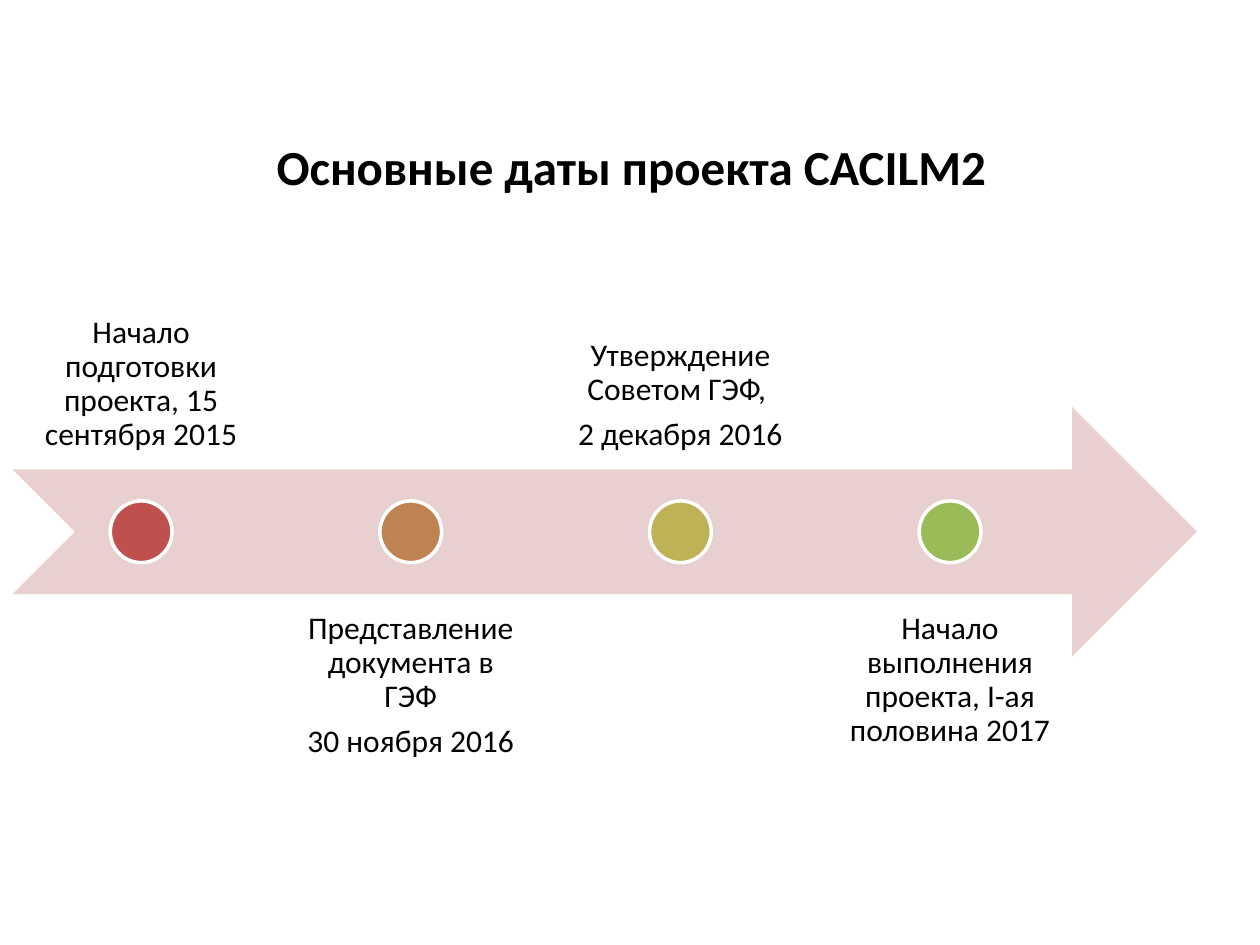
from pptx import Presentation
from pptx.dml.color import RGBColor
from pptx.enum.shapes import MSO_SHAPE
from pptx.enum.text import MSO_ANCHOR, PP_ALIGN
from pptx.util import Inches, Pt

FONT = "Calibri"
BLACK = RGBColor(0x00, 0x00, 0x00)
WHITE = RGBColor(0xFF, 0xFF, 0xFF)
ARROW_PINK = RGBColor(0xE8, 0xD0, 0xD0)
RED = RGBColor(0xC0, 0x50, 0x4D)
BROWN = RGBColor(0xBE, 0x83, 0x51)
OLIVE = RGBColor(0xBD, 0xB2, 0x55)
GREEN = RGBColor(0x9B, 0xBB, 0x59)

MILESTONES = [
    (RED, ["Начало подготовки проекта, 15 сентября 2015"]),
    (BROWN, ["Представление документа в ГЭФ", "30 ноября 2016"]),
    (OLIVE, ["Утверждение Советом ГЭФ, ", "2 декабря 2016"]),
    (GREEN, ["Начало выполнения проекта, I-ая половина 2017"]),
]

ARROW_LEFT, ARROW_TOP = 0.1, 3.23
ARROW_WIDTH, ARROW_HEIGHT = 9.4, 1.98
LABEL_WIDTH, LABEL_HEIGHT = 2.04, 1.98
MILESTONE_STEP = 2.14
UPPER_LABEL_TOP, LOWER_LABEL_TOP = 1.75, 4.72
DOT_SIZE = 0.49


def add_text(slide, left, top, width, height, lines, size, anchor,
             bold=False, inset=0.1, line_spacing=1.0):
    box = slide.shapes.add_textbox(
        Inches(left), Inches(top), Inches(width), Inches(height))
    frame = box.text_frame
    frame.word_wrap = True
    frame.vertical_anchor = anchor
    frame.margin_left = frame.margin_right = Inches(inset)
    frame.margin_top = frame.margin_bottom = Inches(inset)
    for index, line in enumerate(lines):
        paragraph = frame.add_paragraph() if index else frame.paragraphs[0]
        paragraph.alignment = PP_ALIGN.CENTER
        paragraph.line_spacing = line_spacing
        if index:
            paragraph.space_before = Pt(0.35 * size)
        run = paragraph.add_run()
        run.text = line
        run.font.name = FONT
        run.font.size = Pt(size)
        run.font.bold = bold
        run.font.color.rgb = BLACK


def add_filled(slide, preset, left, top, width, height, color):
    shape = slide.shapes.add_shape(
        preset, Inches(left), Inches(top), Inches(width), Inches(height))
    shape.shadow.inherit = False
    shape.fill.solid()
    shape.fill.fore_color.rgb = color
    shape.line.fill.background()
    return shape


def add_milestone(slide, index, color, lines):
    """Place a dot on the arrow with its label above or below in turn."""
    left = ARROW_LEFT + index * MILESTONE_STEP
    above = index % 2 == 0
    add_text(slide, left, UPPER_LABEL_TOP if above else LOWER_LABEL_TOP,
             LABEL_WIDTH, LABEL_HEIGHT, lines, 18,
             MSO_ANCHOR.BOTTOM if above else MSO_ANCHOR.TOP,
             inset=0.14, line_spacing=0.9)
    dot = add_filled(slide, MSO_SHAPE.OVAL,
                     left + (LABEL_WIDTH - DOT_SIZE) / 2,
                     ARROW_TOP + (ARROW_HEIGHT - DOT_SIZE) / 2,
                     DOT_SIZE, DOT_SIZE, color)
    dot.line.color.rgb = WHITE
    dot.line.width = Pt(2)


def main():
    presentation = Presentation()
    presentation.slide_width = Inches(10)
    presentation.slide_height = Inches(7.5)
    slide = presentation.slides.add_slide(presentation.slide_layouts[6])

    add_text(slide, 0.51, 0.69, 9, 1.25, ["Основные даты проекта CACILM2"],
             28, MSO_ANCHOR.MIDDLE, bold=True)
    add_filled(slide, MSO_SHAPE.NOTCHED_RIGHT_ARROW, ARROW_LEFT, ARROW_TOP,
               ARROW_WIDTH, ARROW_HEIGHT, ARROW_PINK)
    for index, (color, lines) in enumerate(MILESTONES):
        add_milestone(slide, index, color, lines)

    presentation.save("out.pptx")


if __name__ == "__main__":
    main()
